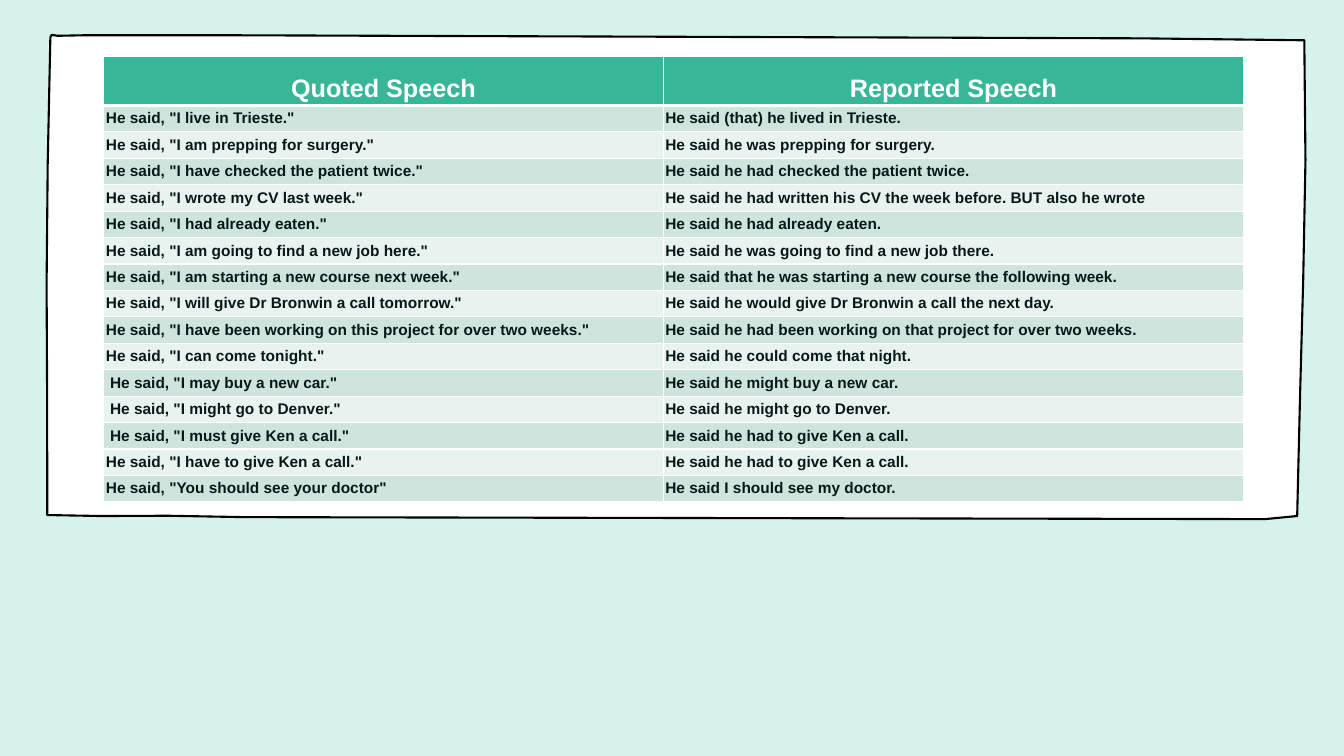
from typing import NamedTuple

from lxml.etree import SubElement
from pptx import Presentation
from pptx.dml.color import RGBColor
from pptx.enum.text import MSO_ANCHOR as Anchor, PP_ALIGN as Align
from pptx.oxml.ns import qn
from pptx.util import Pt

MINT, WHITE, BLACK, GREEN, INK = "D5F2EB", "FFFFFF", "000000", "38B698", "071819"
BANDS = ("CEE5DD", "E8F3EF")
COLUMN_WIDTHS = (399.6, 414.72)
HEADER_HEIGHT, ROW_HEIGHT = 35, 18.88
MARGIN = 1.5

# Hand-drawn card outline, clockwise from the top left
CARD_OUTLINE = (
    (36, 26.6), (37, 24.9), (41, 25.6), (61, 25.2), (160, 25.2), (815, 27.4), (931.7, 28.8),
    (932.5, 114.5), (930.9, 199.6), (928.6, 284.4), (926.6, 368.6), (903.6, 370.8),
    (175, 369.4), (120, 368.4), (72, 368.6), (33.8, 367.9),
    (33.7, 286.5), (33.3, 203.4), (34.1, 117),
)


class Example(NamedTuple):
    quoted: str
    reported: str
    indent: float = 0


class CellStyle(NamedTuple):
    fill: str
    colour: str
    size: float
    align: Align
    anchor: Anchor
    top: float = 1
    bottom: float = 1


HEADINGS = Example("Quoted Speech", "Reported Speech")
EXAMPLES = (
    Example('He said, "I live in Trieste."', "He said (that) he lived in Trieste."),
    Example('He said, "I am prepping for surgery."', "He said he was prepping for surgery."),
    Example('He said, "I have checked the patient twice."',
            "He said he had checked the patient twice."),
    Example('He said, "I wrote my CV last week."',
            "He said he had written his CV the week before. BUT also he wrote"),
    Example('He said, "I had already eaten."', "He said he had already eaten."),
    Example('He said, "I am going to find a new job here."',
            "He said he was going to find a new job there."),
    Example('He said, "I am starting a new course next week."',
            "He said that he was starting a new course the following week."),
    Example('He said, "I will give Dr Bronwin a call tomorrow."',
            "He said he would give Dr Bronwin a call the next day."),
    Example('He said, "I have been working on this project for over two weeks."',
            "He said he had been working on that project for over two weeks."),
    Example('He said, "I can come tonight."', "He said he could come that night."),
    Example('He said, "I may buy a new car."', "He said he might buy a new car.", 3),
    Example('He said, "I might go to Denver."', "He said he might go to Denver.", 3),
    Example('He said, "I must give Ken a call."', "He said he had to give Ken a call.", 3),
    Example('He said, "I have to give Ken a call."', "He said he had to give Ken a call."),
    Example('He said, "You should see your doctor"', "He said I should see my doctor."),
)


def rgb(colour: str) -> RGBColor:
    return RGBColor.from_string(colour)


def draw_card(slide) -> None:
    builder = slide.shapes.build_freeform(*map(Pt, CARD_OUTLINE[0]), scale=1.0)
    builder.add_line_segments([(Pt(x), Pt(y)) for x, y in CARD_OUTLINE[1:]], close=True)
    card = builder.convert_to_shape()
    card.shadow.inherit = False
    card.fill.solid()
    card.fill.fore_color.rgb = rgb(WHITE)
    card.line.color.rgb = rgb(BLACK)
    card.line.width = Pt(1.5)


def add_borders(cell, style: CellStyle) -> None:
    properties = cell._tc.get_or_add_tcPr()
    for side, width in (("L", 1), ("R", 1), ("T", style.top), ("B", style.bottom)):
        border = SubElement(properties, qn(f"a:ln{side}"), w=str(Pt(width)))
        SubElement(SubElement(border, qn("a:solidFill")), qn("a:srgbClr"), val=WHITE)


def fill_cell(cell, text: str, style: CellStyle, indent: float = 0) -> None:
    add_borders(cell, style)
    cell.fill.solid()
    cell.fill.fore_color.rgb = rgb(style.fill)
    cell.margin_left = Pt(MARGIN + indent)
    cell.margin_top = cell.margin_right = cell.margin_bottom = Pt(MARGIN)
    cell.vertical_anchor = style.anchor
    cell.text_frame.text = text
    paragraph = cell.text_frame.paragraphs[0]
    paragraph.alignment = style.align
    font = paragraph.runs[0].font
    font.name, font.size, font.bold = "Arial", Pt(style.size), True
    font.color.rgb = rgb(style.colour)


def draw_speech_table(slide) -> None:
    height = HEADER_HEIGHT + ROW_HEIGHT * len(EXAMPLES)
    speech = slide.shapes.add_table(len(EXAMPLES) + 1, 2, Pt(74.16), Pt(40.32),
                                    Pt(sum(COLUMN_WIDTHS)), Pt(height)).table
    for column, width in zip(speech.columns, COLUMN_WIDTHS):
        column.width = Pt(width)
    for number, example in enumerate((HEADINGS, *EXAMPLES)):
        if number == 0:
            style = CellStyle(GREEN, WHITE, 18, Align.CENTER, Anchor.BOTTOM, bottom=3)
        else:
            style = CellStyle(BANDS[(number - 1) % 2], INK, 11, Align.LEFT, Anchor.MIDDLE,
                              top=3 if number == 1 else 1)
        speech.rows[number].height = Pt(ROW_HEIGHT if number else HEADER_HEIGHT)
        fill_cell(speech.cell(number, 0), example.quoted, style, example.indent)
        fill_cell(speech.cell(number, 1), example.reported, style)


def main() -> None:
    deck = Presentation()
    deck.slide_width, deck.slide_height = Pt(960), Pt(540)
    slide = deck.slides.add_slide(deck.slide_layouts[6])
    slide.background.fill.solid()
    slide.background.fill.fore_color.rgb = rgb(MINT)
    draw_card(slide)
    draw_speech_table(slide)
    deck.save("out.pptx")


if __name__ == "__main__":
    main()
